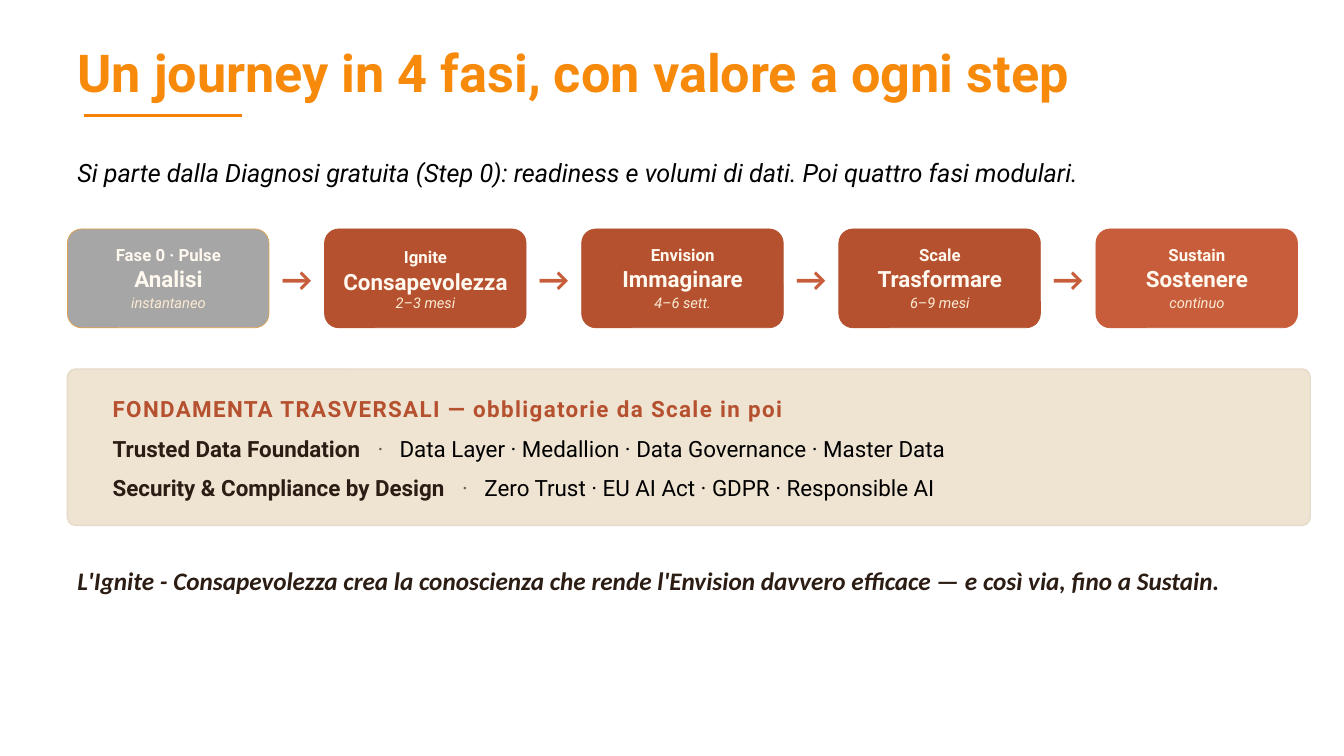
from lxml import etree
from pptx import Presentation
from pptx.dml.color import RGBColor
from pptx.enum import shapes, text
from pptx.oxml import ns
from pptx.util import Cm, Pt

COLORS = {
    "title": "F78A0A", "rule": "F68106", "black": "000000", "dark": "2B1D14",
    "grey": "A6A6A6", "gold": "E0A24E", "rust": "B5512F", "coral": "C75D3A",
    "cream": "FFF8EF", "sand": "FBEAD3", "panel": "EFE3D2", "edge": "E6DAC8",
    "dot": "6B5D52",
}
LEFT = 1.7
PHASE_TOP, PHASE_W, PHASE_H, PITCH = 5.77, 5.08, 2.49, 6.48
PHASES = [
    (["Fase 0 · Pulse", "Analisi"], "instantaneo", "grey", "gold"),
    (["Ignite Consapevolezza"], "2–3 mesi", "rust", "rust"),
    (["Envision", "Immaginare"], "4–6 sett.", "rust", "rust"),
    (["Scale", "Trasformare"], "6–9 mesi", "rust", "rust"),
    (["Sustain", "Sostenere"], "continuo", "coral", "coral"),
]
FOUNDATIONS = [
    ("Trusted Data Foundation", (6.68, 7.23),
     "Data Layer · Medallion · Data Governance · Master Data"),
    ("Security & Compliance by Design", (8.81, 9.37),
     "Zero Trust · EU AI Act · GDPR · Responsible AI"),
]


def rgb(name):
    return RGBColor.from_string(COLORS[name])


def style(font, size, color, bold=False, italic=False, name="Roboto"):
    font.name, font.size = name, Pt(size)
    font.bold, font.italic = bold, italic
    font.color.rgb = rgb(color)


def add_box(s, x, y, w, h):
    """Add an empty, wrapping, vertically centred text box."""
    tf = s.shapes.add_textbox(Cm(x), Cm(y), Cm(w), Cm(h)).text_frame
    tf.word_wrap = True
    tf.vertical_anchor = text.MSO_ANCHOR.MIDDLE
    return tf


def add_line(s, x, y, w, h, words, size, color, center=False, **kw):
    p = add_box(s, x, y, w, h).paragraphs[0]
    p.alignment = text.PP_ALIGN.CENTER if center else text.PP_ALIGN.LEFT
    p.add_run().text = words
    style(p.font, size, color, **kw)
    return p


def add_card(s, x, y, w, h, fill, line, width, radius):
    sp = s.shapes.add_shape(shapes.MSO_SHAPE.ROUNDED_RECTANGLE,
                            Cm(x), Cm(y), Cm(w), Cm(h))
    sp.adjustments[0] = radius
    sp.shadow.inherit = False
    sp.fill.solid()
    sp.fill.fore_color.rgb = rgb(fill)
    sp.line.color.rgb = rgb(line)
    sp.line.width = Pt(width)


def add_title(s, words):
    sp = s.shapes.title
    sp.left, sp.top, sp.width, sp.height = Cm(LEFT), Cm(0.91), Cm(29.54), Cm(1.98)
    tf = sp.text_frame
    tf.vertical_anchor = text.MSO_ANCHOR.MIDDLE
    p = tf.paragraphs[0]
    p.add_run().text = words
    p.alignment = text.PP_ALIGN.LEFT
    p.line_spacing = 0.9
    style(p.font, 37.3, "title", bold=True)

    rule = s.shapes.add_connector(shapes.MSO_CONNECTOR.STRAIGHT,
                                  Cm(2.11), Cm(2.92), Cm(6.1), Cm(2.92))
    rule.line.color.rgb = rgb("rule")
    rule.line.width = Pt(2.25)
    etree.SubElement(rule._element.spPr, ns.qn("a:effectLst"))


def add_phase_name(s, x, lines):
    """Write the small phase label and its larger name below it."""
    tf = add_box(s, x, 6.12, 4.83, 1.27)
    for i, words in enumerate(lines):
        p = tf.paragraphs[0] if i == 0 else tf.add_paragraph()
        p.alignment = text.PP_ALIGN.CENTER
        label, gap, name = words.partition(" ") if len(lines) == 1 else (words, "", "")
        p.add_run().text = label
        style(p.font, 16 if i else 12, "cream", bold=True)
        if name:
            r = p.add_run()
            r.text = gap + name
            r.font.size = Pt(16)


def add_phase(s, i, lines, duration, fill, line):
    x = LEFT + i * PITCH
    add_card(s, x, PHASE_TOP, PHASE_W, PHASE_H, fill, line, 0.5, 0.143)
    add_phase_name(s, x + 0.13, lines)
    add_line(s, x + 0.13, 7.24, 4.83, 0.76, duration, 10.5, "sand",
             center=True, italic=True)
    if i < len(PHASES) - 1:
        add_line(s, x + PHASE_W, PHASE_TOP, PITCH - PHASE_W, PHASE_H, "→", 24,
                 "coral", center=True, bold=True, name="Calibri")


def add_foundation(s, y, name, stops, details):
    p = add_box(s, 2.59, y, 29.46, 0.89).paragraphs[0]
    tabs = etree.SubElement(p._p.get_or_add_pPr(), ns.qn("a:tabLst"))
    for stop in stops:
        etree.SubElement(tabs, ns.qn("a:tab"), pos=str(Cm(stop)), algn="l")
    p.font.name, p.font.size = "Roboto", Pt(16)
    for words, color, bold in ((name, "dark", True), ("\t·\t", "dot", False),
                               (details, "black", False)):
        r = p.add_run()
        r.text = words
        r.font.bold = bold
        r.font.color.rgb = rgb(color)


def add_foundations(s):
    add_card(s, LEFT, 9.3, 31.32, 3.94, "panel", "edge", 1, 0.052)
    p = add_line(s, 2.59, 9.86, 29.46, 0.89,
                 "FONDAMENTA TRASVERSALI — obbligatorie da Scale in poi",
                 16, "rust", bold=True)
    p.runs[0]._r.get_or_add_rPr().set("spc", "100")
    for i, row in enumerate(FOUNDATIONS):
        add_foundation(s, 10.87 + i * 0.97, *row)


def main():
    prs = Presentation()
    prs.slide_width, prs.slide_height = Cm(33.87), Cm(19.05)
    s = prs.slides.add_slide(prs.slide_layouts[5])
    add_title(s, "Un journey in 4 fasi, con valore a ogni step")
    add_line(s, LEFT, 3.78, 31.24, 1.14,
             "Si parte dalla Diagnosi gratuita (Step 0): readiness e volumi di dati. "
             "Poi quattro fasi modulari.", 18, "black", italic=True)
    for i, phase in enumerate(PHASES):
        add_phase(s, i, *phase)
    add_foundations(s)
    add_line(s, LEFT, 14.12, 31.24, 1.02,
             "L'Ignite - Consapevolezza crea la conoscienza che rende l'Envision "
             "davvero efficace — e così via, fino a Sustain.",
             18, "dark", bold=True, italic=True, name="Calibri")
    prs.save("out.pptx")


if __name__ == "__main__":
    main()
